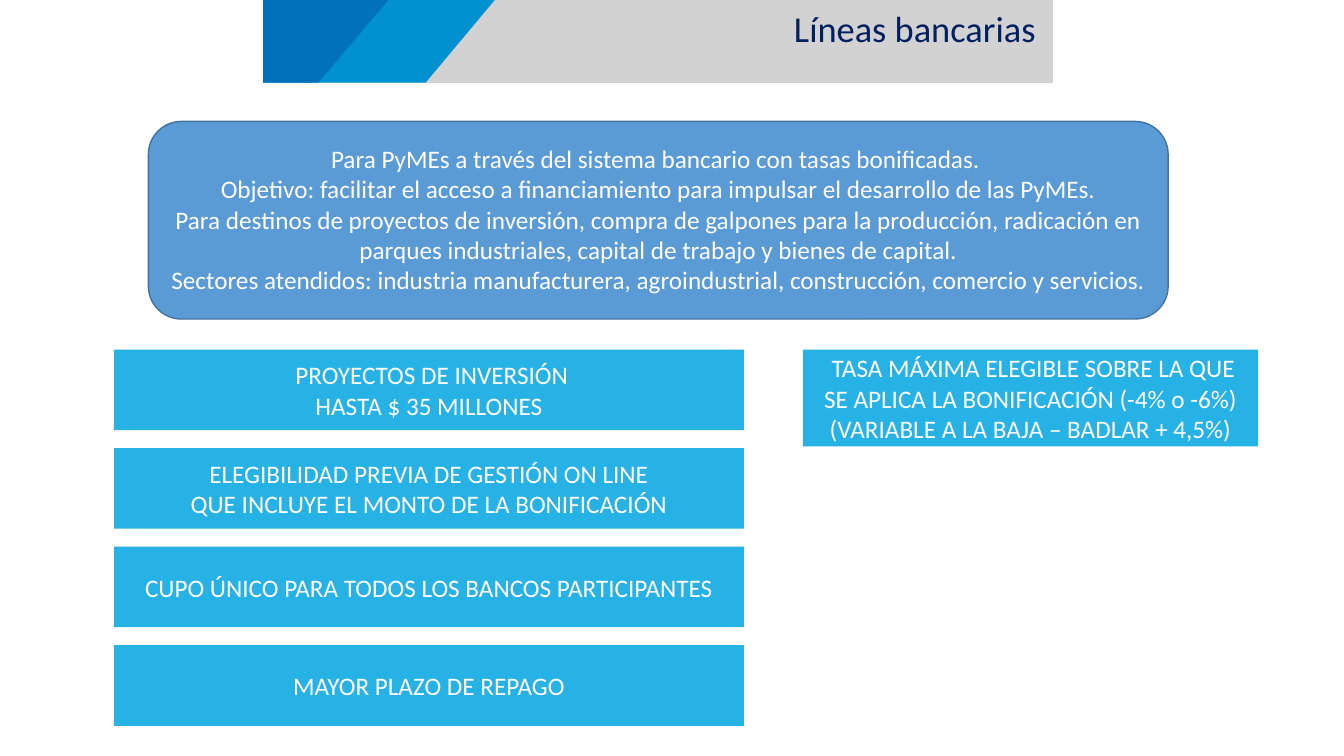
from pptx import Presentation
from pptx.dml.color import RGBColor
from pptx.enum.shapes import MSO_SHAPE as SHAPE
from pptx.enum.text import MSO_ANCHOR as ANCHOR, PP_ALIGN as ALIGN
from pptx.util import Cm, Pt

FONT = "Calibri"
WHITE, NAVY, GREY = "FFFFFF", "002060", "D2D2D3"
DARK_BLUE, MID_BLUE, SKY = "0071BB", "0091D1", "27B2E5"
PANEL, PANEL_EDGE = "5B9BD5", "43739E"

INTRO = [
    "Para PyMEs a través del sistema bancario con tasas bonificadas. ",
    "Objetivo: facilitar el acceso a financiamiento para impulsar el desarrollo de las PyMEs.",
    "Para destinos de proyectos de inversión, compra de galpones para la producción, "
    "radicación en parques industriales, capital de trabajo y bienes de capital.",
    "Sectores atendidos: industria manufacturera, agroindustrial, construcción, "
    "comercio y servicios.",
]
FEATURES = [
    [" PROYECTOS DE INVERSIÓN", "HASTA $ 35 MILLONES"],
    ["ELEGIBILIDAD PREVIA DE GESTIÓN ON LINE", "QUE INCLUYE EL MONTO DE LA BONIFICACIÓN"],
    ["CUPO ÚNICO PARA TODOS LOS BANCOS PARTICIPANTES"],
    ["MAYOR PLAZO DE REPAGO"],
]
RATE = [
    " TASA MÁXIMA ELEGIBLE SOBRE LA QUE SE APLICA LA BONIFICACIÓN (-4% o -6%)",
    "(VARIABLE A LA BAJA – BADLAR + 4,5%)",
]


def color(value):
    return RGBColor.from_string(value)


def paint(sp, fill, line=None):
    sp.shadow.inherit = False
    sp.fill.solid()
    sp.fill.fore_color.rgb = color(fill)
    if line:
        sp.line.color.rgb = color(line)
        sp.line.width = Pt(1)
    else:
        sp.line.fill.background()


def write(tf, lines, size=18, ink=WHITE, align=ALIGN.CENTER, wrap=True):
    tf.word_wrap = wrap
    for i, line in enumerate(lines):
        p = tf.paragraphs[0] if i == 0 else tf.add_paragraph()
        p.alignment = align
        r = p.add_run()
        r.text = line
        r.font.name = FONT
        r.font.size = Pt(size)
        r.font.color.rgb = color(ink)


def add_banner(s, x, y, w, h):
    # Bands from back to front: top width, bottom width, fill
    bands = [(w, w, GREY), (5.84, 4.1, MID_BLUE), (3.16, 1.4, DARK_BLUE)]
    for top, bottom, fill in bands:
        outline = s.shapes.build_freeform(Cm(x), Cm(y))
        outline.add_line_segments(
            [(Cm(x + top), Cm(y)), (Cm(x + bottom), Cm(y + h)), (Cm(x), Cm(y + h))])
        paint(outline.convert_to_shape(), fill)

    # Title, right-aligned in the banner
    title_w = 6.65
    tb = s.shapes.add_textbox(
        Cm(x + w - title_w - 0.18), Cm(y + 0.03), Cm(title_w), Cm(1.37))
    write(tb.text_frame, ["Líneas bancarias"], 26, NAVY, ALIGN.RIGHT, wrap=False)


def add_intro(s, x, y, w, h):
    # Rounded panel
    sp = s.shapes.add_shape(SHAPE.ROUNDED_RECTANGLE, Cm(x), Cm(y), Cm(w), Cm(h))
    paint(sp, PANEL, PANEL_EDGE)
    # Text over the panel
    tb = s.shapes.add_textbox(Cm(x + 0.18), Cm(y + 0.43), Cm(w - 0.36), Cm(4.11))
    write(tb.text_frame, INTRO)


def add_card(s, lines, x, y, w, h):
    sp = s.shapes.add_shape(SHAPE.RECTANGLE, Cm(x), Cm(y), Cm(w), Cm(h))
    paint(sp, SKY)
    sp.text_frame.vertical_anchor = ANCHOR.MIDDLE
    write(sp.text_frame, lines)


def add_features(s, x, y, w, h):
    card_h = 2.03
    pitch = (h - card_h) / (len(FEATURES) - 1)
    for i, lines in enumerate(FEATURES):
        add_card(s, lines, x, y + i * pitch, w, card_h)


def main():
    prs = Presentation()
    prs.slide_width, prs.slide_height = Cm(33.87), Cm(19.05)
    s = prs.slides.add_slide(prs.slide_layouts[6])
    add_banner(s, 6.63, 0, 19.91, 2.08)
    add_intro(s, 3.74, 3.06, 25.7, 4.98)
    add_features(s, 2.87, 8.81, 15.88, 9.48)
    add_card(s, RATE, 20.24, 8.81, 11.46, 2.44)
    prs.save("out.pptx")


if __name__ == "__main__":
    main()
